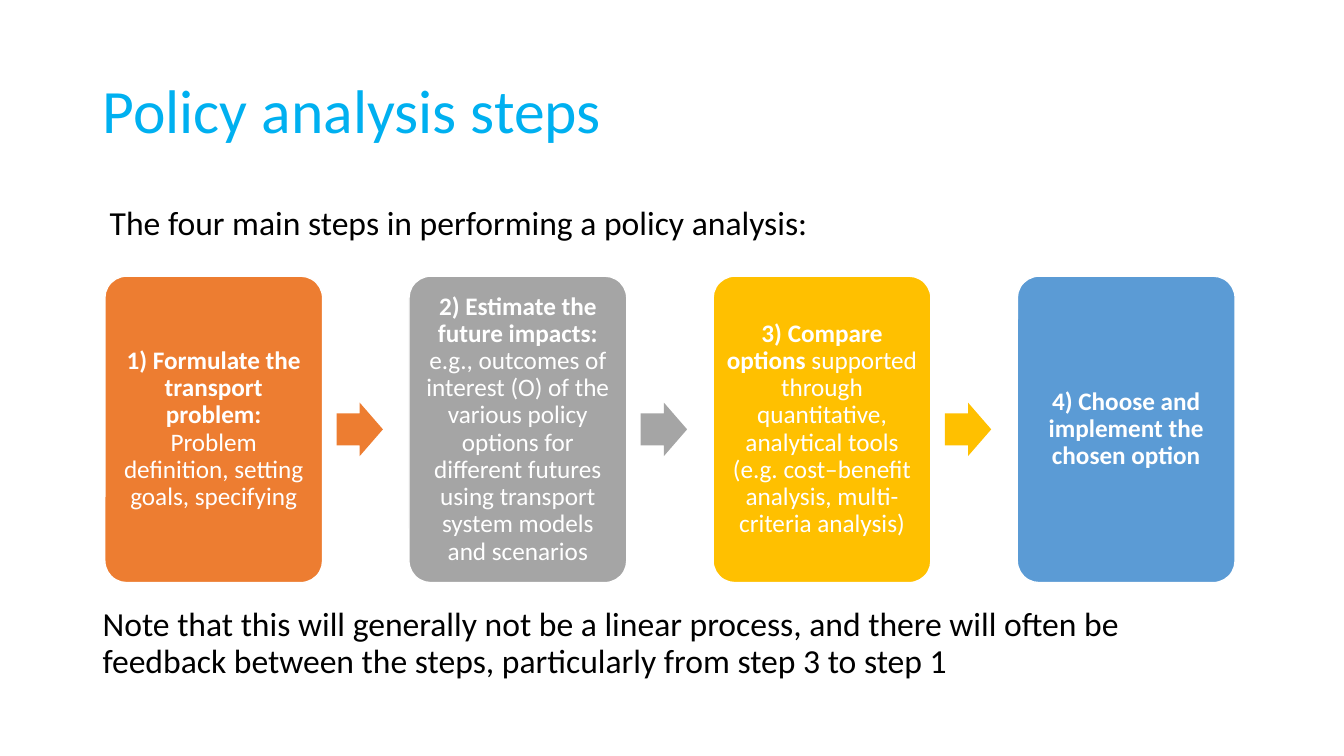
from pptx import Presentation
from pptx.dml.color import RGBColor
from pptx.enum import shapes, text
from pptx.util import Inches, Pt

FONT = "Calibri"
WHITE = RGBColor(0xFF, 0xFF, 0xFF)
BLACK = RGBColor(0x00, 0x00, 0x00)
SKY = RGBColor(0x00, 0xB0, 0xF0)
ORANGE = RGBColor(0xED, 0x7D, 0x31)
GRAY = RGBColor(0xA5, 0xA5, 0xA5)
GOLD = RGBColor(0xFF, 0xC0, 0x00)
BLUE = RGBColor(0x5B, 0x9B, 0xD5)

# heading, detail, detail starts on its own line, colour
STEPS = [
    ("1) Formulate the transport problem:",
     "Problem definition, setting goals, specifying", True, ORANGE),
    ("2) Estimate the future impacts: ",
     "e.g., outcomes of interest (O) of the various policy options for "
     "different futures using transport system models and scenarios", False, GRAY),
    ("3) Compare options",
     " supported through quantitative, analytical tools "
     "(e.g. cost–benefit analysis, multi-criteria analysis)", False, GOLD),
    ("4) Choose and implement the chosen option", "", False, BLUE),
]


def style_run(r, size, color, bold=False):
    r.font.name = FONT
    r.font.size = Pt(size)
    r.font.color.rgb = color
    r.font.bold = bold


def add_text(slide, box, content, size, color, anchor=text.MSO_ANCHOR.TOP):
    tf = slide.shapes.add_textbox(*map(Inches, box)).text_frame
    tf.word_wrap = True
    tf.vertical_anchor = anchor
    p = tf.paragraphs[0]
    p.text = content
    p.line_spacing = 0.9
    style_run(p.runs[0], size, color)


def add_filled(slide, kind, box, color):
    sp = slide.shapes.add_shape(kind, *map(Inches, box))
    sp.shadow.inherit = False
    sp.fill.solid()
    sp.fill.fore_color.rgb = color
    return sp


def add_card(slide, box, heading, detail, own_line, color):
    sp = add_filled(slide, shapes.MSO_SHAPE.ROUNDED_RECTANGLE, box, color)
    sp.adjustments[0] = 0.1
    sp.line.color.rgb = WHITE
    sp.line.width = Pt(1)
    tf = sp.text_frame
    tf.word_wrap = True
    tf.vertical_anchor = text.MSO_ANCHOR.MIDDLE
    tf.margin_left = tf.margin_right = tf.margin_top = tf.margin_bottom = Inches(0.07)
    p = tf.paragraphs[0]
    p.alignment = text.PP_ALIGN.CENTER
    p.line_spacing = 0.9
    p.text = heading
    style_run(p.runs[0], 18, WHITE, bold=True)
    if own_line:
        p.add_line_break()
    if detail:
        r = p.add_run()
        r.text = detail
        style_run(r, 18, WHITE)


def add_arrow(slide, box, color):
    sp = add_filled(slide, shapes.MSO_SHAPE.RIGHT_ARROW, box, color)
    sp.adjustments[0] = 0.6
    sp.adjustments[1] = 0.5
    sp.line.fill.background()


def add_process(slide, box):
    """Cards spread evenly over the box, with an arrow in each gap."""
    left, top, width, height = box
    card_w, arrow_w, arrow_h = 2.16, 0.46, 0.53
    pitch = (width - card_w) / (len(STEPS) - 1)
    for i, (heading, detail, own_line, color) in enumerate(STEPS):
        x = left + i * pitch
        add_card(slide, (x, top, card_w, height), heading, detail, own_line, color)
        if i < len(STEPS) - 1:
            arrow_x = x + (card_w + pitch - arrow_w) / 2 - 0.06
            arrow_y = top + (height - arrow_h) / 2
            add_arrow(slide, (arrow_x, arrow_y, arrow_w, arrow_h), color)


def build_slide(prs):
    slide = prs.slides.add_slide(prs.slide_layouts[6])
    add_text(slide, (0.92, 0.4, 11.5, 1.45), "Policy analysis steps", 44, SKY,
             text.MSO_ANCHOR.MIDDLE)
    add_text(slide, (0.99, 2, 11.43, 0.5),
             "The four main steps in performing a policy analysis:", 24, BLACK)
    add_process(slide, (1.04, 2.74, 11.21, 3.04))
    add_text(slide, (0.92, 5.98, 11.5, 0.9),
             "Note that this will generally not be a linear process, and there will "
             "often be feedback between the steps, particularly from step 3 to step 1",
             24, BLACK)


def main():
    prs = Presentation()
    prs.slide_width = Inches(13.33)
    prs.slide_height = Inches(7.5)
    build_slide(prs)
    prs.save("out.pptx")


if __name__ == "__main__":
    main()
